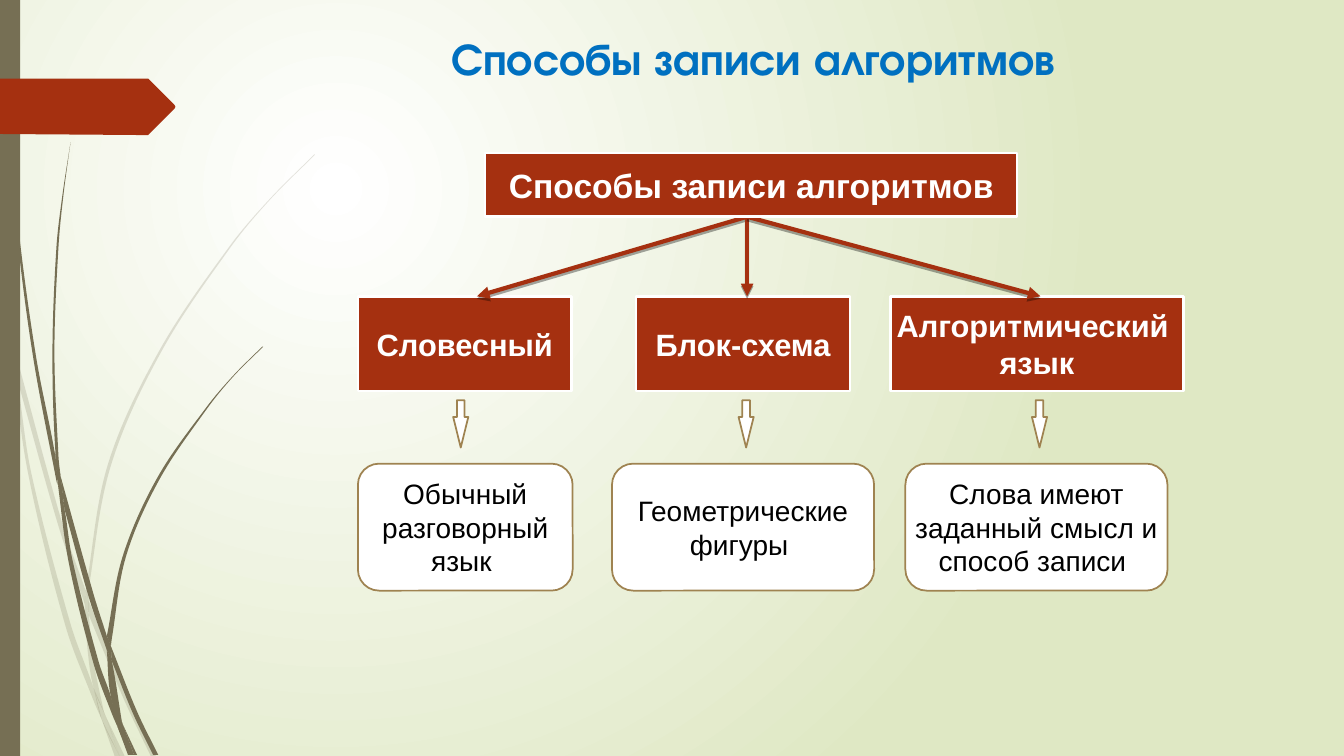
import math

import pptx
import pptx.dml.color
import pptx.enum.shapes
import pptx.enum.text
import pptx.oxml
import pptx.oxml.ns
import pptx.util

Inches, Pt = pptx.util.Inches, pptx.util.Pt
SHAPE = pptx.enum.shapes.MSO_SHAPE
OLIVE, RED, TAN, WHITE = "766F54", "A53010", "9F8351", "FFFFFF"
NS = pptx.oxml.ns.nsdecls("a")

TITLE = "Способы записи алгоритмов"
ROOT = (4.81, 1.52, 5.28, 0.63)
CARD_TOP, CARD_H = 2.94, 0.94
NOTE_TOP, NOTE_H = 4.6, 1.26
DOWN_TOP, DOWN_W, DOWN_H = 3.97, 0.15, 0.47
COLUMNS = [
    # card text, card left, width; note text, note left, width; link x, down arrow x
    ("Словесный", 3.55, 2.12,
     "Обычный\nразговорный\nязык ", 3.55, 2.13, 4.73, 4.57),
    ("Блок-схема", 6.31, 2.12,
     "Геометрические\nфигуры ", 6.07, 2.6, 7.41, 7.4),
    ("Алгоритмический \nязык", 8.83, 2.91,
     "Слова имеют\nзаданный смысл и\nспособ записи ", 8.98, 2.6, 10.32, 10.31),
]

# Grass blades: the two edges of each, both from top to bottom
PALE_BLADES = [
    ([(0, 2.82), (0.09, 3.22), (0.11, 3.5)], [(0, 2.99), (0.1, 3.44), (0.11, 3.5)]),
    ([(0.14, 3.45), (0.62, 5.2), (0.85, 5.86)], [(0.17, 3.76), (0.58, 5.22), (0.84, 5.99)]),
    ([(0.88, 5.96), (1.27, 6.92), (1.55, 7.51)], [(0.88, 6.1), (1.23, 6.94), (1.5, 7.51)]),
    ([(1.05, 7.11), (1.24, 7.51)], [(1.05, 7.11), (1.19, 7.51)]),
    ([(0.11, 3.5), (0.17, 3.76), (0.31, 4.69), (0.7, 6.19), (0.93, 6.83), (1.01, 7.14)],
     [(0.11, 3.5), (0.28, 4.7), (0.65, 6.21), (0.92, 6.93), (1.01, 7.14)]),
    ([(0.84, 5.99), (0.88, 6.1), (0.91, 6.46), (1.03, 7.06), (1.05, 7.11)],
     [(0.84, 5.99), (0.87, 6.46), (0.93, 6.83), (1.05, 7.11)]),
    ([(3.12, 1.53), (2.68, 1.97), (2.28, 2.44), (1.58, 3.48), (1.07, 4.61), (0.85, 5.86)],
     [(3.12, 1.54), (2.68, 1.98), (2.29, 2.45), (1.6, 3.49), (1.1, 4.62), (0.88, 5.84),
      (0.88, 5.96)]),
    ([(1.01, 7.14), (1.19, 7.51)], [(1.01, 7.14), (1.14, 7.51)]),
    ([(0.85, 5.86), (0.88, 5.96), (0.88, 6.1)], [(0.84, 5.99), (0.88, 6.08)]),
    ([(0.93, 6.83), (1.05, 7.11), (1.19, 7.51)], [(0.93, 6.83), (1.01, 7.14), (1.19, 7.51)]),
]
DARK_BLADES = [
    ([(0.04, 0), (0.08, 1.09), (0.19, 2.32), (0.36, 3.55), (0.55, 4.53), (0.57, 4.81)],
     [(0.03, 0), (0.07, 1.1), (0.17, 2.33), (0.33, 3.55), (0.56, 4.77), (0.57, 4.81)]),
    ([(0.6, 4.72), (0.93, 5.9), (1.06, 6.31)], [(0.64, 5.05), (0.88, 5.92), (1.06, 6.45)]),
    ([(1.1, 6.41), (1.36, 7.06), (1.57, 7.49)], [(1.11, 6.56), (1.32, 7.08), (1.52, 7.49)]),
    ([(0.57, 4.77), (0.64, 5.05), (0.72, 5.56), (0.98, 6.57), (1.1, 6.91), (1.17, 7.22)],
     [(0.57, 4.77), (0.68, 5.57), (0.93, 6.59), (1.11, 7.08), (1.17, 7.22)]),
    ([(0.7, 1.41), (0.63, 1.93), (0.58, 2.45), (0.54, 3.49), (0.58, 4.53), (0.6, 4.72)],
     [(0.7, 1.41), (0.62, 1.93), (0.56, 2.45), (0.52, 3.49), (0.55, 4.49), (0.6, 4.72)]),
    ([(1.22, 7.19), (1.36, 7.49)], [(1.22, 7.19), (1.33, 7.49)]),
    ([(0.55, 4.49), (0.6, 4.72), (0.64, 5.05)], [(0.55, 4.53), (0.57, 4.77), (0.64, 5.05)]),
    ([(2.6, 3.44), (2.31, 3.73), (2.04, 4.05), (1.56, 4.74), (1.22, 5.51), (1.06, 6.31)],
     [(2.61, 3.44), (2.31, 3.74), (2.05, 4.06), (1.58, 4.76), (1.25, 5.52), (1.11, 6.33),
      (1.1, 6.41)]),
    ([(1.17, 7.22), (1.31, 7.49)], [(1.17, 7.22), (1.27, 7.49)]),
    ([(1.06, 6.45), (1.11, 6.56), (1.21, 7.16), (1.22, 7.19)],
     [(1.06, 6.45), (1.1, 6.91), (1.22, 7.19)]),
    ([(1.06, 6.31), (1.1, 6.41), (1.11, 6.56)], [(1.06, 6.45), (1.11, 6.56)]),
    ([(1.1, 6.91), (1.22, 7.19), (1.33, 7.49)], [(1.1, 6.91), (1.17, 7.22), (1.3, 7.49)]),
]
TAG_EDGES = [[(0, 0.78), (1.47, 0.78)], [(1.48, 0.79), (1.73, 1.04)],
             [(1.74, 1.06), (1.73, 1.08)], [(1.48, 1.33), (1.47, 1.34)], [(1.36, 1.34), (0, 1.33)]]


def rgb(value):
    return pptx.dml.color.RGBColor.from_string(value)


def style(sp, fill, line=None, width=0):
    sp.shadow.inherit = False
    sp.fill.solid()
    sp.fill.fore_color.rgb = rgb(fill)
    if line:
        sp.line.color.rgb = rgb(line)
        sp.line.width = Pt(width)
    else:
        sp.line.fill.background()


def add_box(s, kind, at, fill, line=None, width=0):
    sp = s.shapes.add_shape(kind, *map(Inches, at))
    style(sp, fill, line, width)
    return sp


def write(sp, text, size, color, bold=False, font="Arial"):
    tf = sp.text_frame
    tf.word_wrap = False
    tf.text = text
    for p in tf.paragraphs:
        p.alignment = pptx.enum.text.PP_ALIGN.CENTER
        for r in p.runs:
            r.font.name, r.font.size, r.font.bold = font, Pt(size), bold
            r.font.color.rgb = rgb(color)


def bezier(edge):
    """Two handles and an end point for each step of a smooth curve along the edge."""
    ends = [edge[0], *edge, edge[-1]]
    slopes = []
    for (x1, y1), (x2, y2) in zip(ends, ends[2:]):
        size = math.hypot(x2 - x1, y2 - y1)
        slopes.append(((x2 - x1) / size, (y2 - y1) / size))
    points = []
    for (x1, y1), (x2, y2), (u1, v1), (u2, v2) in zip(edge, edge[1:], slopes, slopes[1:]):
        k = math.hypot(x2 - x1, y2 - y1) / 3
        points += [(x1 + u1 * k, y1 + v1 * k), (x2 - u2 * k, y2 - v2 * k), (x2, y2)]
    return points


def add_outline(s, edges, fill, alpha=100):
    """Closed shape of smooth edges, joined by straight lines."""
    points = [edges[0][0]]
    for edge in edges:
        if edge[0] != points[-1]:
            points += [points[-1], edge[0], edge[0]]
        points += bezier(edge)
    points = [(Inches(x), Inches(y)) for x, y in points]
    builder = s.shapes.build_freeform(*points[0])
    builder.add_line_segments(points[1:], close=True)
    sp = builder.convert_to_shape()
    style(sp, fill)
    qn, spPr = pptx.oxml.ns.qn, sp._element.spPr
    steps = list(spPr.iter(qn("a:lnTo")))
    for trio in zip(steps[::3], steps[1::3], steps[2::3]):
        curve = pptx.oxml.parse_xml(f"<a:cubicBezTo {NS}/>")
        trio[0].addprevious(curve)
        for step in trio:
            curve.append(step[0])
            step.getparent().remove(step)
    if alpha < 100:
        spPr.find(".//" + qn("a:srgbClr")).append(
            pptx.oxml.parse_xml(f'<a:alpha {NS} val="{alpha * 1000}"/>'))


def add_link(s, x1, y1, x2, y2):
    """Line with an arrowhead at its first point and a soft shadow below."""
    c = s.shapes.add_connector(pptx.enum.shapes.MSO_CONNECTOR.STRAIGHT,
                               *map(Inches, (x1, y1, x2, y2)))
    c.line.color.rgb = rgb(RED)
    c.line.width = Pt(3)
    c.line._get_or_add_ln().append(
        pptx.oxml.parse_xml(f'<a:headEnd {NS} type="triangle"/>'))
    c._element.spPr.append(pptx.oxml.parse_xml(
        f'<a:effectLst {NS}><a:outerShdw dist="{Pt(1.8)}" dir="5400000" rotWithShape="0">'
        '<a:srgbClr val="000000"><a:alpha val="35000"/></a:srgbClr>'
        '</a:outerShdw></a:effectLst>'))


def fill_background(s):
    """Round gradient, white at its centre in the upper left."""
    fill = s.background.fill
    fill.gradient()
    for stop, color in zip(fill.gradient_stops, (WHITE, "DFE8C4")):
        stop.color.rgb = rgb(color)
    lin = s._element.find(".//" + pptx.oxml.ns.qn("a:lin"))
    lin.getparent().replace(lin, pptx.oxml.parse_xml(
        f'<a:path {NS} path="circle"><a:fillToRect l="50000" t="50000" '
        'r="100000" b="100000"/></a:path>'))


prs = pptx.Presentation()
prs.slide_width, prs.slide_height = Inches(13.33), Inches(7.5)
s = prs.slides.add_slide(prs.slide_layouts[6])
fill_background(s)

for blades, alpha in ((PALE_BLADES, 20), (DARK_BLADES, 100)):
    for one, other in blades:
        add_outline(s, [one, other[::-1]], OLIVE, alpha)
add_box(s, SHAPE.RECTANGLE, (0, 0, 0.2, 7.5), OLIVE)
add_outline(s, TAG_EDGES, RED)

for text, left, width, *_ in COLUMNS:
    card = add_box(s, SHAPE.RECTANGLE, (left, CARD_TOP, width, CARD_H), RED, WHITE, 1.75)
    write(card, text, 22, WHITE, bold=True)
for *_, link_x, _ in COLUMNS:
    add_link(s, link_x, CARD_TOP, 7.41, ROOT[1] + ROOT[3])
write(add_box(s, SHAPE.RECTANGLE, ROOT, RED, WHITE, 1.75), TITLE, 24, WHITE, bold=True)

for _, _, _, text, left, width, _, down_x in COLUMNS:
    note = add_box(s, SHAPE.ROUNDED_RECTANGLE, (left, NOTE_TOP, width, NOTE_H), WHITE, TAN, 1.25)
    write(note, text, 20, "000000")
    down = add_box(s, SHAPE.DOWN_ARROW, (down_x - DOWN_W / 2, DOWN_TOP, DOWN_W, DOWN_H),
                   WHITE, TAN, 1.25)
    down.adjustments[0], down.adjustments[1] = 0.5, 2.02

title = s.shapes.add_textbox(*map(Inches, (4.05, 0.26, 6.84, 0.64)))
write(title, TITLE, 32, "0070C0", bold=True, font="TeX Gyre Adventor")
prs.save("out.pptx")
